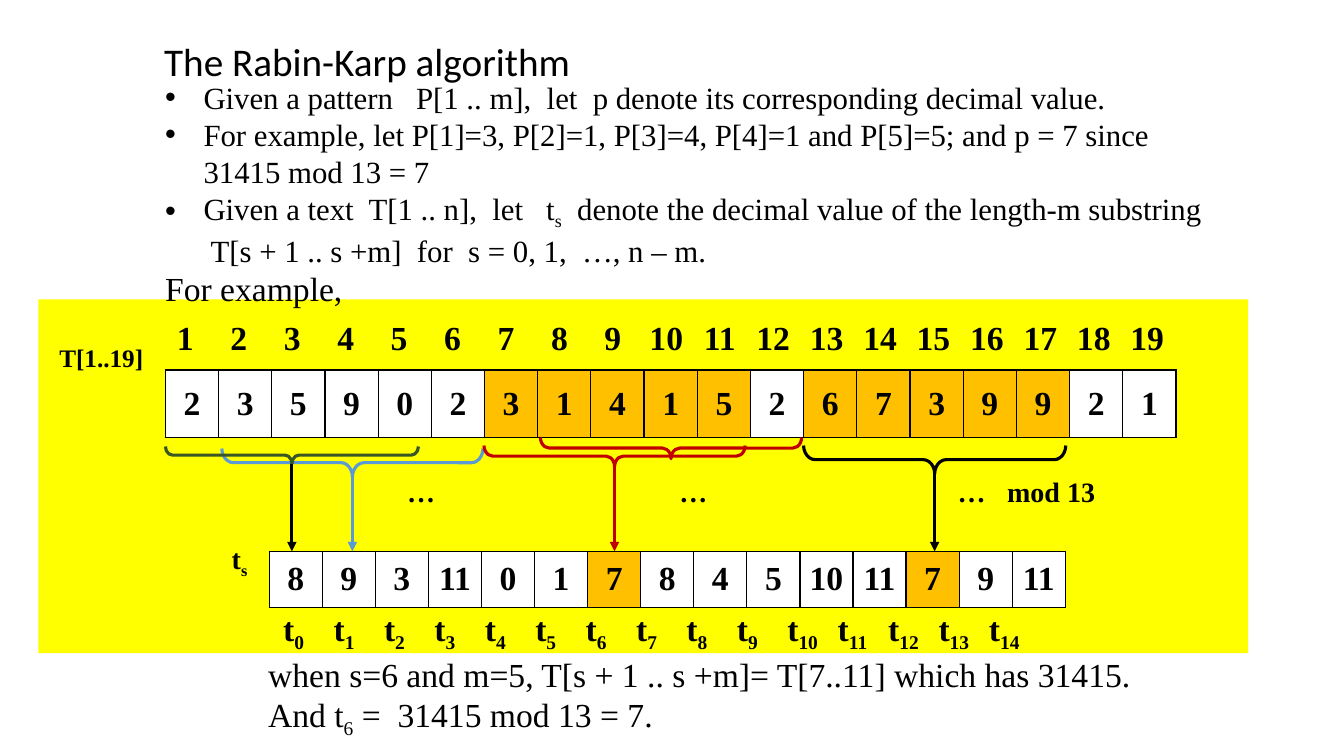
from dataclasses import dataclass

from lxml import etree
from pptx import Presentation
from pptx.dml.color import RGBColor
from pptx.enum.shapes import MSO_CONNECTOR, MSO_SHAPE
from pptx.enum.text import MSO_ANCHOR, PP_ALIGN
from pptx.oxml.ns import qn
from pptx.util import Inches, Pt

RECTANGLE = MSO_SHAPE.RECTANGLE
RIGHT_BRACE = MSO_SHAPE.RIGHT_BRACE
STRAIGHT = MSO_CONNECTOR.STRAIGHT
TOP = MSO_ANCHOR.TOP
MIDDLE = MSO_ANCHOR.MIDDLE
CENTER = PP_ALIGN.CENTER


@dataclass(frozen=True)
class Theme:
    """Colours, fonts and sizes of the slide."""
    black: str = "000000"
    white: str = "FFFFFF"
    panel: str = "FFFF00"
    match: str = "FFC000"
    blue: str = "5B9BD5"
    red: str = "C00000"
    green: str = "385723"
    title_font: str = "Calibri"
    body_font: str = "Times New Roman"
    title: int = 28
    large: int = 24
    body: int = 22
    note: int = 20
    label: int = 18
    line: float = 2.25
    border: float = 1


THEME = Theme()
TEXT_DIGITS = "2359023141526739921"
MATCH_DIGITS = {*range(6, 11), *range(12, 17)}
VALUES = [8, 9, 3, 11, 0, 1, 7, 8, 4, 5, 10, 11, 7, 9, 11]
MATCH_VALUES = {6, 12}
BULLETS = [
    "Given a pattern   P[1 .. m],  let  p denote its corresponding decimal value.",
    "For example, let P[1]=3, P[2]=1, P[3]=4, P[4]=1 and P[5]=5; and p = 7 since  31415 mod 13 = 7",
    "Given a text  T[1 .. n],  let   t|s|  denote the decimal value of the length-m substring"
    "  T[s + 1 .. s +m]  for  s = 0, 1,  …, n – m.",
]
CONCLUSION = [
    "when s=6 and m=5, T[s + 1 .. s +m]= T[7..11] which has 31415.",
    "And t|6| =  31415 mod 13 = 7.",
]


def color(value):
    """Turn a hex string into a colour."""
    return RGBColor.from_string(value)


def style_run(run, size, bold=False, font=THEME.body_font):
    """Format a run of black text."""
    run.font.name = font
    run.font.size = Pt(size)
    run.font.bold = bold
    run.font.color.rgb = color(THEME.black)


def write(paragraph, text, size, bold=False, font=THEME.body_font):
    """Write text in which every second piece between bars is a subscript."""
    for index, piece in enumerate(text.split("|")):
        if piece:
            run = paragraph.add_run()
            run.text = piece
            style_run(run, size, bold, font)
            if index % 2:
                run._r.get_or_add_rPr().set("baseline", "-25000")


def set_tabs(paragraph, stops, align="l"):
    """Give a paragraph its tab stops."""
    tab_list = etree.SubElement(paragraph._p.get_or_add_pPr(), qn("a:tabLst"))
    for stop in stops:
        etree.SubElement(tab_list, qn("a:tab"), pos=str(Inches(stop)), algn=align)


def set_indent(paragraph, left, bullet=None):
    """Indent a paragraph, hanging it behind a bullet if there is one."""
    properties = paragraph._p.get_or_add_pPr()
    properties.set("marL", str(Inches(left)))
    properties.set("indent", str(-Inches(left) if bullet else 0))
    if bullet:
        etree.SubElement(properties, qn("a:buFont"), typeface="Arial")
        etree.SubElement(properties, qn("a:buChar"), char=bullet)


def add_text_frame(slide, box, anchor=TOP, wrap=True):
    """Add an empty text box and return its frame."""
    frame = slide.shapes.add_textbox(*map(Inches, box)).text_frame
    frame.word_wrap = wrap
    frame.vertical_anchor = anchor
    return frame


def add_label(slide, box, text, size, bold=True, font=THEME.body_font, wrap=True):
    """Add a label of one line."""
    frame = add_text_frame(slide, box, wrap=wrap)
    write(frame.paragraphs[0], text, size, bold, font)


def add_tabbed_line(slide, box, text, size, stops, align="l"):
    """Add a bold line laid out on tab stops."""
    paragraph = add_text_frame(slide, box, MIDDLE).paragraphs[0]
    set_tabs(paragraph, stops, align)
    write(paragraph, text, size, True)


def add_panel(slide, box):
    """Add the coloured panel behind the arrays."""
    panel = slide.shapes.add_shape(RECTANGLE, *map(Inches, box))
    panel.shadow.inherit = False
    panel.fill.solid()
    panel.fill.fore_color.rgb = color(THEME.panel)
    panel.line.fill.background()


def add_borders(cell):
    """Draw the four borders of a cell."""
    properties = cell._tc.get_or_add_tcPr()
    for index, side in enumerate(("a:lnL", "a:lnR", "a:lnT", "a:lnB")):
        line = etree.Element(qn(side), w=str(Pt(THEME.border)))
        fill = etree.SubElement(line, qn("a:solidFill"))
        etree.SubElement(fill, qn("a:srgbClr"), val=THEME.black)
        properties.insert(index, line)


def add_array(slide, box, values, matches):
    """Add a one-row table with its matching cells highlighted."""
    table = slide.shapes.add_table(1, len(values), *map(Inches, box)).table
    table.first_row = table.horz_banding = False
    for index, value in enumerate(values):
        table.columns[index].width = Inches(box[2] / len(values))
        cell = table.cell(0, index)
        cell.fill.solid()
        cell.fill.fore_color.rgb = color(THEME.match if index in matches else THEME.white)
        cell.margin_left = cell.margin_right = Inches(0.07)
        cell.margin_top = cell.margin_bottom = 0
        cell.vertical_anchor = MIDDLE
        paragraph = cell.text_frame.paragraphs[0]
        paragraph.text = str(value)
        paragraph.alignment = CENTER
        style_run(paragraph.runs[0], THEME.large, True)
        add_borders(cell)


def add_window(slide, box, line_color, arrow_color=None, arrow_end=5.47):
    """Bracket a window of the text, with an arrow down to its value if coloured."""
    left, top, span, depth = box
    center = left + span / 2
    brace = slide.shapes.add_shape(
        RIGHT_BRACE, Inches(center - depth / 2), Inches(top + depth / 2 - span / 2),
        Inches(depth), Inches(span))
    brace.rotation = 90
    brace.adjustments[0], brace.adjustments[1] = 0.41, 0.5
    brace.shadow.inherit = False
    brace.fill.background()
    brace.line.color.rgb = color(line_color)
    brace.line.width = Pt(THEME.line)
    if arrow_color:
        x = Inches(center)
        arrow = slide.shapes.add_connector(STRAIGHT, x, Inches(top + depth), x, Inches(arrow_end))
        arrow.line.color.rgb = color(arrow_color)
        arrow.line.width = Pt(THEME.line)
        etree.SubElement(arrow.line._get_or_add_ln(), qn("a:tailEnd"), type="triangle")
        etree.SubElement(arrow._element.spPr, qn("a:effectLst"))


def add_explanation(slide, box):
    """Add the bulleted definitions and the lead-in."""
    frame = add_text_frame(slide, box)
    for index, text in enumerate(BULLETS):
        paragraph = frame.add_paragraph() if index else frame.paragraphs[0]
        set_indent(paragraph, 0.38, "•")
        write(paragraph, text, THEME.body)
    write(frame.add_paragraph(), "For example,", THEME.large)


def add_conclusion(slide, box):
    """Add the names of the values and the closing lines."""
    frame = add_text_frame(slide, box)
    names = frame.paragraphs[0]
    set_tabs(names, [1.07 + 0.5 * index for index in range(len(VALUES))])
    write(names, "".join(f"\tt|{index}|" for index in range(len(VALUES))), THEME.large, True)
    for text in CONCLUSION:
        paragraph = frame.add_paragraph()
        set_indent(paragraph, 0.92)
        write(paragraph, text, THEME.large)


def add_diagram(slide, box):
    """Add the text array, its windows and the array of values."""
    left, top, width, height = box
    count = len(TEXT_DIGITS)
    add_array(slide, (left, top, width, 0.67), TEXT_DIGITS, MATCH_DIGITS)
    add_array(slide, (left + 1.03, top + 1.8, 7.9, height - 1.8), VALUES, MATCH_VALUES)
    add_tabbed_line(slide, (left, top - 0.58, width, 0.5),
                    "".join(f"\t{index + 1}" for index in range(count)), THEME.large,
                    [0.1 + 0.53 * index for index in range(count)], "ctr")
    add_tabbed_line(slide, (left, top + 0.98, width, 0.44), "\t…\t…\t…\tmod 13",
                    THEME.note, [2.3, 5, 7.76, 8.25])
    for offset, drop, span, depth, line_color, arrow_color in (
            (0.56, 0.78, 2.59, 0.28, THEME.blue, THEME.blue),
            (3.16, 0.75, 2.59, 0.21, THEME.red, THEME.red),
            (6.33, 0.75, 2.6, 0.28, THEME.black, THEME.black),
            (0, 0.76, 2.51, 0.17, THEME.green, THEME.black),
            (3.72, 0.67, 2.59, 0.21, THEME.red, None)):
        add_window(slide, (left + offset, top + drop, span, depth),
                   line_color, arrow_color, top + 1.8)
    add_label(slide, (left - 1.15, top - 0.32, 1.04, 0.4), "T[1..19]", THEME.label, wrap=False)
    add_label(slide, (left + 0.56, top + 1.65, 0.38, 0.44), "t|s|", THEME.note)


def main():
    """Build and save the slide."""
    presentation = Presentation()
    presentation.slide_width, presentation.slide_height = Inches(13.33), Inches(7.5)
    slide = presentation.slides.add_slide(presentation.slide_layouts[6])
    add_panel(slide, (0.38, 2.97, 12, 3.51))
    add_diagram(slide, (1.64, 3.67, 10.03, 2.36))
    add_conclusion(slide, (1.64, 5.98, 9.95, 1.31))
    add_explanation(slide, (1.54, 0.73, 10.48, 2.36))
    add_label(slide, (1.53, 0.32, 4.36, 0.57), "The Rabin-Karp algorithm",
              THEME.title, False, THEME.title_font, False)
    presentation.save("out.pptx")


if __name__ == "__main__":
    main()
